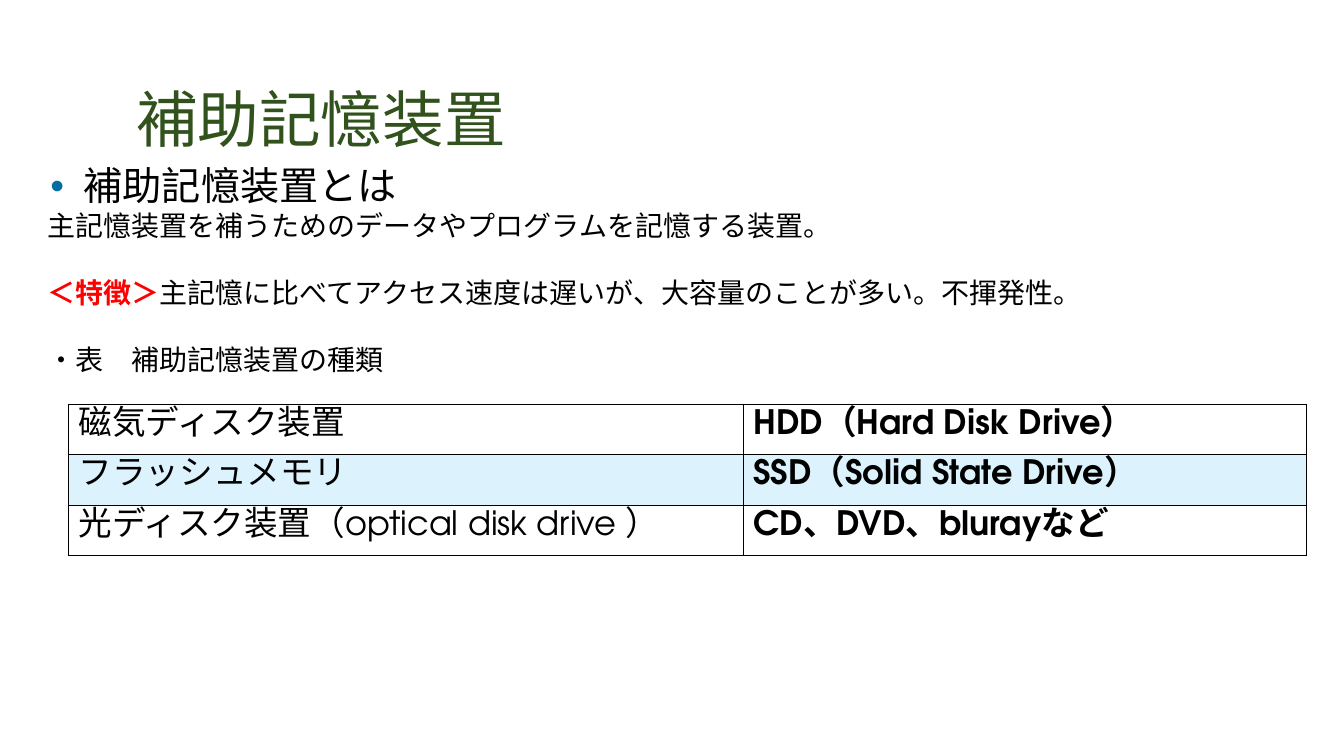
import pptx
import pptx.dml.color
import pptx.enum.text
import pptx.oxml
import pptx.oxml.ns
import pptx.util
from lxml import etree
from pptx.util import Cm

COLORS = {"title": "31521C", "text": "000000", "bullet": "056EA0",
          "accent": "FF0000", "band": "51C3F9", "border": "000000"}
SANS = "Noto Sans CJK JP"
GEOMETRIC = "TeX Gyre Adventor"
NS = 'xmlns:a="http://schemas.openxmlformats.org/drawingml/2006/main"'


def rgb(name):
    return pptx.dml.color.RGBColor.from_string(COLORS[name])


def element(tag, attributes="", content=""):
    return pptx.oxml.parse_xml(f"<a:{tag} {NS} {attributes}>{content}</a:{tag}>")


class SlideBuilder:
    def __init__(self, prs):
        self.s = prs.slides.add_slide(prs.slide_layouts[1])

    def run(self, p, text, font, size, color="text", bold=False):
        r = p.add_run()
        r.text = text
        style = {"name": font, "size": pptx.util.Pt(size), "bold": bold}
        for key, value in style.items():
            setattr(r.font, key, value)
        r.font.color.rgb = rgb(color)
        ea = etree.SubElement(r.font._element, pptx.oxml.ns.qn("a:ea"))
        ea.set("typeface", font)

    def frame(self, sp, anchor="TOP", **margins):
        tf = sp.text_frame
        style = {"word_wrap": True,
                 "auto_size": pptx.enum.text.MSO_AUTO_SIZE.NONE,
                 "vertical_anchor": pptx.enum.text.MSO_ANCHOR[anchor], **margins}
        for key, value in style.items():
            setattr(tf, key, value)
        return tf

    def placeholder(self, idx, box, text, size, color, spacing, anchor="TOP"):
        sp = self.s.placeholders[idx]
        for key, value in zip(("left", "top", "width", "height"), box):
            setattr(sp, key, Cm(value))
        tf = self.frame(sp, anchor, margin_left=Cm(0.33), margin_right=Cm(0.33),
                        margin_top=Cm(0.18), margin_bottom=Cm(0.18))
        p = tf.paragraphs[0]
        style = {"alignment": pptx.enum.text.PP_ALIGN.LEFT,
                 "line_spacing": spacing, "space_before": pptx.util.Pt(0)}
        for key, value in style.items():
            setattr(p, key, value)
        self.run(p, text, SANS, size, color)
        return p

    def bullet(self, p, indent):
        pPr = p._p.get_or_add_pPr()
        pPr.set("marL", str(Cm(indent)))
        pPr.set("indent", str(-Cm(indent)))
        pPr.append(element("buClr", content=f'<a:srgbClr val="{COLORS["bullet"]}"/>'))
        pPr.append(element("buFont", 'typeface="Arial"'))
        pPr.append(element("buChar", 'char="•"'))

    def text(self, box, paragraphs, size):
        tf = self.frame(self.s.shapes.add_textbox(*map(Cm, box)))
        for i, runs in enumerate(paragraphs):
            p = tf.add_paragraph() if i else tf.paragraphs[0]
            p.space_before = pptx.util.Pt(1.2 * size if i else 0)
            for text, color, bold in runs:
                self.run(p, text, GEOMETRIC, size, color, bold)

    def cell(self, cell, text, bold, banded):
        self.run(cell.text_frame.paragraphs[0], text, GEOMETRIC, 24, bold=bold)
        tcPr = cell._tc.get_or_add_tcPr()
        line = f'<a:solidFill><a:srgbClr val="{COLORS["border"]}"/></a:solidFill>'
        for side in ("lnL", "lnR", "lnT", "lnB"):
            tcPr.append(element(side, 'w="12700"', line))
        if banded:
            cell.fill.solid()
            cell.fill.fore_color.rgb = rgb("band")
            fill = tcPr.find(pptx.oxml.ns.qn("a:solidFill"))
            fill[0].append(element("alpha", 'val="20000"'))
        else:
            cell.fill.background()

    def table(self, left, top, widths, row_height, rows):
        table = self.s.shapes.add_table(
            len(rows), len(widths), Cm(left), Cm(top),
            Cm(sum(widths)), Cm(row_height * len(rows))).table
        table.first_row = table.horz_banding = False
        for column, width in zip(table.columns, widths):
            column.width = Cm(width)
        for i, row in enumerate(rows):
            for j, text in enumerate(row):
                self.cell(table.cell(i, j), text, bold=j == 1, banded=i == 1)


def main():
    prs = pptx.Presentation()
    prs.slide_width, prs.slide_height = Cm(33.87), Cm(19.05)
    slide = SlideBuilder(prs)
    slide.placeholder(0, (3.1, 0.2, 28.22, 3.89), "補助記憶装置", 44, "title", 0.85, "BOTTOM")
    p = slide.placeholder(1, (0.94, 3.96, 32, 14.35), "補助記憶装置とは", 28, "text", 0.95)
    slide.bullet(p, 0.84)
    slide.text((0.94, 5.13, 32.79, 4.52), [
        [("主記憶装置を補うためのデータやプログラムを記憶する装置。", "text", False)],
        [("＜特徴＞", "accent", True),
         ("主記憶に比べてアクセス速度は遅いが、大容量のことが多い。不揮発性。", "text", False)],
        [("・表　補助記憶装置の種類", "text", False)],
    ], 20)
    slide.table(1.73, 10.19, (17, 14.2), 1.27, [
        ("磁気ディスク装置", "HDD（Hard Disk Drive）"),
        ("フラッシュメモリ", "SSD（Solid State Drive）"),
        ("光ディスク装置（optical disk drive ）", "CD、DVD、blurayなど"),
    ])
    prs.save("out.pptx")


if __name__ == "__main__":
    main()
